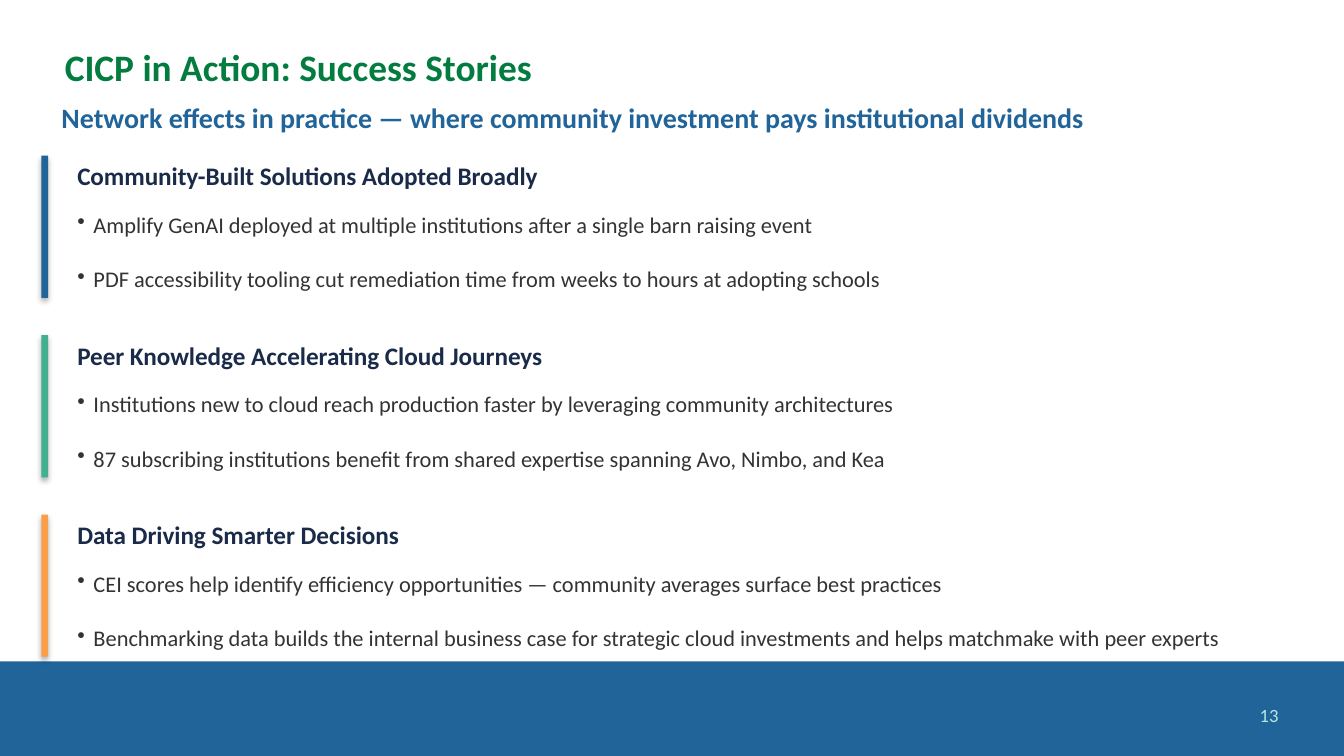
"""Build the CICP success stories slide with three accented story blocks."""
from lxml.etree import SubElement
from pptx import Presentation
from pptx.dml.color import RGBColor
from pptx.enum.shapes import MSO_SHAPE as Shape
from pptx.enum.text import MSO_ANCHOR as Anchor, PP_ALIGN as Align
from pptx.oxml.ns import qn
from pptx.util import Pt

COLORS = {
    "blue": "20649A", "title": "037C3F", "green": "42AF8E", "orange": "FA9E48",
    "heading": "1A2B4A", "body": "333333", "number": "B4E9E2", "shadow": "000000",
}
STORIES = [
    ("blue", "Community-Built Solutions Adopted Broadly", [
        "Amplify GenAI deployed at multiple institutions after a single barn raising event",
        "PDF accessibility tooling cut remediation time from weeks to hours at adopting schools",
    ]),
    ("green", "Peer Knowledge Accelerating Cloud Journeys", [
        "Institutions new to cloud reach production faster by leveraging community architectures",
        "87 subscribing institutions benefit from shared expertise spanning Avo, Nimbo, and Kea",
    ]),
    ("orange", "Data Driving Smarter Decisions", [
        "CEI scores help identify efficiency opportunities — community averages surface best practices",
        "Benchmarking data builds the internal business case for strategic cloud investments "
        "and helps matchmake with peer experts",
    ]),
]


def add_text(page, text, left, top, width, height, size, color, bold=False, bullet=False):
    box = page.shapes.add_textbox(Pt(left), Pt(top), Pt(width), Pt(height))
    frame = box.text_frame
    frame.word_wrap = True
    frame.margin_left = frame.margin_right = Pt(5.4)
    frame.margin_top = frame.margin_bottom = Pt(2.7)
    frame.text = text
    para = frame.paragraphs[0]
    if bullet:
        properties = para._p.get_or_add_pPr()
        properties.set("marL", str(Pt(8.7)))
        properties.set("indent", str(-Pt(8.7)))
        SubElement(properties, qn("a:buChar"), char="•")
    style_span(para.runs[0], size, color, bold)
    return frame


def style_span(span, size, color, bold):
    span.font.name = "Calibri"
    span.font.size = Pt(size)
    span.font.bold = bold
    span.font.color.rgb = RGBColor.from_string(COLORS[color])


deck = Presentation()
deck.slide_width, deck.slide_height = Pt(720), Pt(405)
page = deck.slides.add_slide(deck.slide_layouts[5])

band = page.shapes.add_shape(Shape.RECTANGLE, Pt(0), Pt(354.3), Pt(720), Pt(50.7))
band.shadow.inherit = False
band.fill.solid()
band.fill.fore_color.rgb = RGBColor.from_string(COLORS["blue"])
band.line.fill.background()

number = add_text(page, "13", 530, 372.5, 162, 21.6, 10, "number")
number.margin_left = number.margin_right = Pt(7.2)
number.vertical_anchor = Anchor.MIDDLE
number.paragraphs[0].alignment = Align.RIGHT

title = page.shapes.title
title.left, title.top, title.width, title.height = Pt(27.5), Pt(10), Pt(664.5), Pt(54.7)
title.text_frame.text = "CICP in Action: Success Stories"
title.text_frame.vertical_anchor = Anchor.MIDDLE
title_para = title.text_frame.paragraphs[0]
title_para.alignment = Align.LEFT
title_para.line_spacing = 0.9
style_span(title_para.runs[0], 20, "title", True)

add_text(page, "Network effects in practice — where community investment pays institutional dividends",
         27.5, 51.2, 675, 23.8, 15, "blue", bold=True)

for index, (accent, heading, points) in enumerate(STORIES):
    top = 83.4 + index * 96.15
    bar = page.shapes.add_shape(Shape.RECTANGLE, Pt(22.2), Pt(top), Pt(3.6), Pt(76.2))
    bar.fill.solid()
    bar.fill.fore_color.rgb = RGBColor.from_string(COLORS[accent])
    bar.line.fill.background()
    bar.shadow.inherit = False
    effects = bar._element.spPr.find(qn("a:effectLst"))
    shadow = SubElement(effects, qn("a:outerShdw"), blurRad=str(Pt(3.1)), dist=str(Pt(1.8)),
                        dir="5400000", rotWithShape="0")
    shade = SubElement(shadow, qn("a:srgbClr"), val=COLORS["shadow"])
    SubElement(shade, qn("a:alpha"), val="35000")

    add_text(page, heading, 36, top, 659, 21.6, 13.5, "heading", bold=True)
    for row, point in enumerate(points):
        add_text(page, point, 36, top + 27 + row * 29.1, 659, 20.1, 12, "body", bullet=True)

deck.save("out.pptx")
